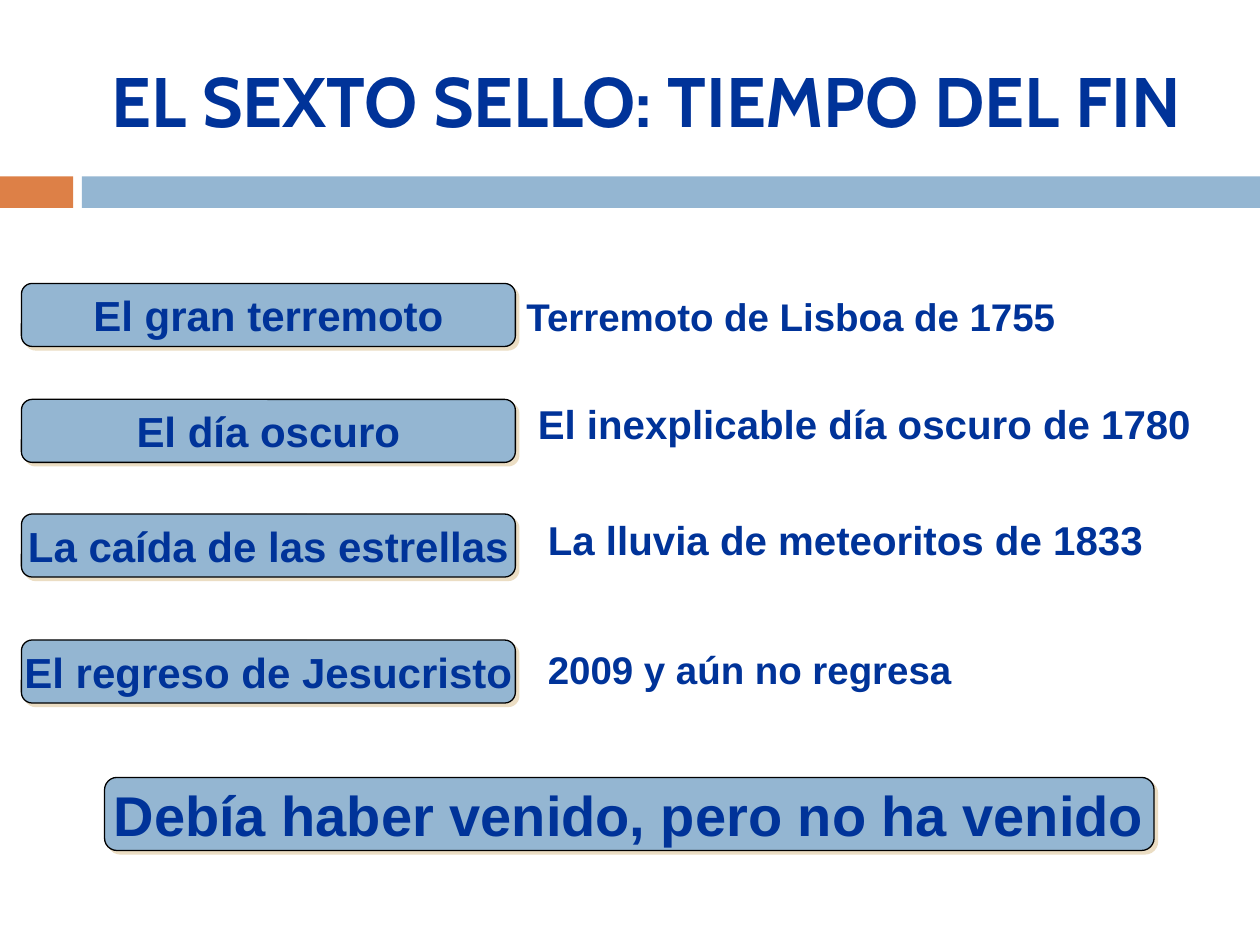
"""Build the slide on the sixth seal: four signs, their dates and a conclusion."""
from lxml.etree import SubElement
from pptx import Presentation
from pptx.dml.color import RGBColor
from pptx.enum.shapes import MSO_SHAPE
from pptx.enum.text import MSO_ANCHOR, PP_ALIGN
from pptx.oxml.ns import qn
from pptx.util import Inches, Pt

NAVY, BLUE, ORANGE, SAND, BLACK = "003399", "94B6D2", "DD8047", "EBDDC3", "000000"
TITLE = "EL SEXTO SELLO: TIEMPO DEL FIN"
CONCLUSION = "Debía haber venido, pero no ha venido"
BANDS = [(0, 0.58, ORANGE), (0.65, 9.35, BLUE)]
SIGNS = [
    ("El gran terremoto", 2.25),
    ("El día oscuro", 3.17),
    ("La caída de las estrellas", 4.08),
    ("El regreso de Jesucristo", 5.08),
]
EVENTS = [
    ("Terremoto de Lisboa de 1755", (4.08, 2.28, 5.92, 0.47), 22),
    ("El inexplicable día oscuro de 1780", (4.17, 3.12, 5.83, 0.49), 23),
    ("La lluvia de meteoritos de 1833", (4.25, 4.04, 5.58, 0.49), 23),
    ("2009 y aún no regresa", (4.25, 5.08, 5.83, 0.47), 22),
]


def color(value):
    return RGBColor.from_string(value)


def write(shape, text, size, font="Arial", align=PP_ALIGN.CENTER,
          anchor=MSO_ANCHOR.MIDDLE, wrap=True):
    frame = shape.text_frame
    frame.word_wrap = wrap
    frame.vertical_anchor = anchor
    paragraph = frame.paragraphs[0]
    paragraph.alignment = align
    run = paragraph.add_run()
    run.text = text
    run.font.name = font
    run.font.size = Pt(size)
    run.font.bold = True
    run.font.color.rgb = color(NAVY)


def add_filled(slide, preset, box, fill):
    shape = slide.shapes.add_shape(preset, *map(Inches, box))
    shape.shadow.inherit = False
    shape.fill.solid()
    shape.fill.fore_color.rgb = color(fill)
    shape.line.fill.background()
    return shape


def add_text(slide, box, text, size, **style):
    write(slide.shapes.add_textbox(*map(Inches, box)), text, size, **style)


def add_shadow(shape):
    effects = shape._element.spPr.find(qn("a:effectLst"))
    shadow = SubElement(effects, qn("a:outerShdw"), blurRad="0", dist=str(Pt(2.8)),
                        dir=str(45 * 60000), algn="ctr", rotWithShape="0")
    SubElement(shadow, qn("a:srgbClr"), val=SAND)


def add_label(slide, box, text, size):
    shape = add_filled(slide, MSO_SHAPE.ROUNDED_RECTANGLE, box, BLUE)
    shape.adjustments[0] = 0.17
    shape.line.color.rgb = color(BLACK)
    shape.line.width = Pt(0.75)
    add_shadow(shape)
    write(shape, text, size, wrap=False)


def main():
    presentation = Presentation()
    presentation.slide_width, presentation.slide_height = Inches(10), Inches(7.5)
    slide = presentation.slides.add_slide(presentation.slide_layouts[6])
    for left, width, fill in BANDS:
        add_filled(slide, MSO_SHAPE.RECTANGLE, (left, 1.4, width, 0.25), fill)
    add_text(slide, (0.67, 0.25, 8.92, 1.08), TITLE, 40, font="Cabin")
    for text, top in SIGNS:
        add_label(slide, (0.17, top, 3.92, 0.5), text, 24)
    add_label(slide, (0.83, 6.17, 8.33, 0.58), CONCLUSION, 32)
    for text, box, size in EVENTS:
        add_text(slide, box, text, size, align=PP_ALIGN.LEFT, anchor=MSO_ANCHOR.TOP)
    presentation.save("out.pptx")


if __name__ == "__main__":
    main()
